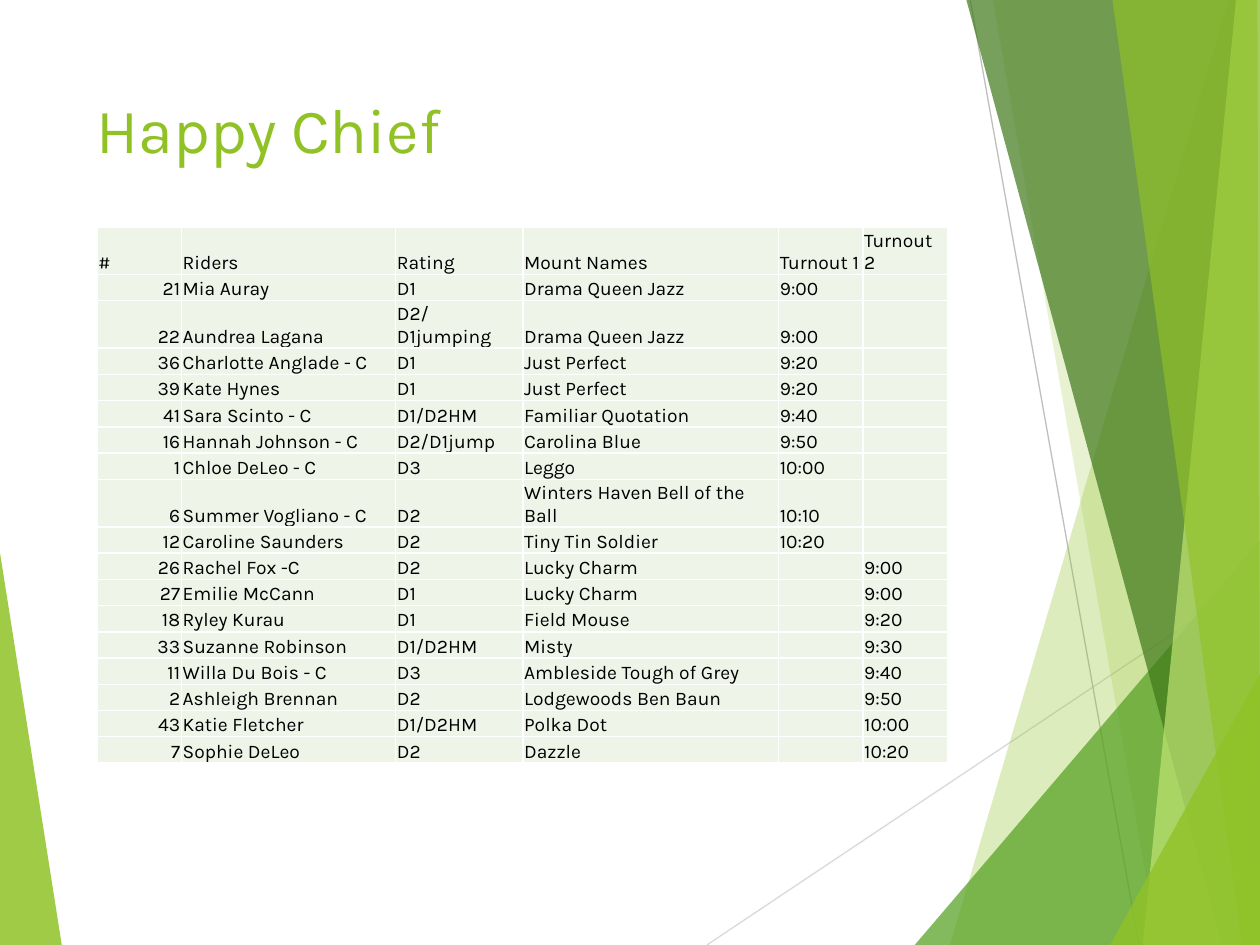
"""Build the Happy Chief turnout slide: green facet backdrop, title and rider table."""
from lxml.etree import SubElement
from pptx import Presentation
from pptx.dml.color import RGBColor as Rgb
from pptx.enum.shapes import MSO_CONNECTOR as Connector
from pptx.enum.text import MSO_ANCHOR as Anchor, PP_ALIGN as Align
from pptx.oxml.ns import qn
from pptx.util import Inches, Pt

TITLE = "Happy Chief"
HEADINGS = ("#", "Riders", "Rating", "Mount Names", "Turnout 1", "Turnout 2")
RIDERS = [
    ("21", "Mia Auray", "D1", "Drama Queen Jazz", "9:00", ""),
    ("22", "Aundrea Lagana", "D2/D1jumping", "Drama Queen Jazz", "9:00", ""),
    ("36", "Charlotte Anglade - C", "D1", "Just Perfect", "9:20", ""),
    ("39", "Kate Hynes", "D1", "Just Perfect", "9:20", ""),
    ("41", "Sara Scinto - C", "D1/D2HM", "Familiar Quotation", "9:40", ""),
    ("16", "Hannah Johnson - C", "D2/D1jump", "Carolina Blue", "9:50", ""),
    ("1", "Chloe DeLeo - C", "D3", "Leggo", "10:00", ""),
    ("6", "Summer Vogliano - C", "D2", "Winters Haven Bell of the Ball", "10:10", ""),
    ("12", "Caroline Saunders", "D2", "Tiny Tin Soldier", "10:20", ""),
    ("26", "Rachel Fox -C", "D2", "Lucky Charm", "", "9:00"),
    ("27", "Emilie McCann", "D1", "Lucky Charm", "", "9:00"),
    ("18", "Ryley Kurau", "D1", "Field Mouse", "", "9:20"),
    ("33", "Suzanne Robinson", "D1/D2HM", "Misty", "", "9:30"),
    ("11", "Willa Du Bois - C", "D3", "Ambleside Tough of Grey", "", "9:40"),
    ("2", "Ashleigh Brennan", "D2", "Lodgewoods Ben Baun", "", "9:50"),
    ("43", "Katie Fletcher", "D1/D2HM", "Polka Dot", "", "10:00"),
    ("7", "Sophie DeLeo", "D2", "Dazzle", "", "10:20"),
]

THEME = {
    "font": "Karla", "title_size": 36, "cell_size": 11,
    "lime": "90C226", "leaf": "54A021", "forest": "3F7819", "pale": "C0E474",
    "ink": "000000", "cell": "EEF4E8", "rule": "FFFFFF",
    "silver": "D9D9D9", "grey": "BFBFBF", "ray_width": 0.75, "rule_width": 1,
}

LEFT_FACET = ("lime", 85, [(0, 58.5), (4.9, 100), (0, 100)])
RAYS = [("silver", (56.1, 100), (100, 60.9)), ("grey", (77, 0), (90.4, 100))]
RIGHT_FACETS = [
    ("lime", 30, [(97.5, 0), (75.4, 100), (100, 100), (100, 0)]),
    ("lime", 20, [(78.8, 0), (91.9, 100), (100, 100), (100, 0)]),
    ("leaf", 72, [(72.6, 100), (100, 57.2), (100, 100)]),
    ("forest", 70, [(76.7, 0), (97, 100), (100, 100), (100, 0)]),
    ("pale", 70, [(98.1, 0), (90.7, 100), (100, 100), (100, 0)]),
    ("lime", 65, [(88.3, 0), (98.6, 100), (100, 100), (99.8, 0)]),
    ("lime", 80, [(88.1, 100), (100, 71.3), (100, 100)]),
]
TITLE_BOX = (6.7, 8.9, 69.4, 19.2)
TABLE_CORNER = (7.7, 24)
COLUMN_SHARES = (6.7, 17, 10.1, 20.3, 6.7, 6.7)
ROW_SHARE = 2.78
CELL_FORMAT = {
    "vertical_anchor": Anchor.BOTTOM, "margin_left": Inches(0.01),
    "margin_right": Inches(0.01), "margin_top": Inches(0.01), "margin_bottom": 0,
}
TITLE_FORMAT = {"word_wrap": True, "vertical_anchor": Anchor.TOP}

deck = Presentation()
deck.slide_width, deck.slide_height = Inches(10), Inches(7.5)
slide = deck.slides.add_slide(deck.slide_layouts[6])


def across(share):
    return round(deck.slide_width * share / 100)


def down(share):
    return round(deck.slide_height * share / 100)


def place(point):
    return across(point[0]), down(point[1])


def color(name):
    return Rgb.from_string(THEME[name])


def apply(target, settings):
    for key, value in settings.items():
        setattr(target, key, value)


def write(paragraph, words, size, ink):
    run = paragraph.add_run()
    run.text = words
    apply(run.font, {"name": THEME["font"], "size": Pt(THEME[size])})
    run.font.color.rgb = color(ink)


def add_facet(tint, opacity, corners):
    start, *others = map(place, corners)
    outline = slide.shapes.build_freeform(*start)
    outline.add_line_segments(others, close=True)
    facet = outline.convert_to_shape()
    facet.shadow.inherit = False
    facet.line.fill.background()
    facet.fill.solid()
    facet.fill.fore_color.rgb = color(tint)
    tint_node = facet.fill._xPr.find(".//" + qn("a:srgbClr"))
    SubElement(tint_node, qn("a:alpha"), val=str(opacity * 1000))


def add_ray(tint, start, end):
    ray = slide.shapes.add_connector(Connector.STRAIGHT, *place(start), *place(end))
    ray.line.color.rgb = color(tint)
    ray.line.width = Pt(THEME["ray_width"])
    SubElement(ray._element.spPr, qn("a:effectLst"))


def add_title():
    left, top, width, height = TITLE_BOX
    heading = slide.shapes.add_textbox(*place((left, top)), *place((width, height)))
    apply(heading.text_frame, TITLE_FORMAT)
    write(heading.text_frame.paragraphs[0], TITLE, "title_size", "lime")


def rule_cell(cell):
    properties = cell._tc.get_or_add_tcPr()
    for side in ("lnL", "lnR", "lnT", "lnB"):
        rule = SubElement(properties, qn("a:" + side), w=str(Pt(THEME["rule_width"])))
        paint = SubElement(rule, qn("a:solidFill"))
        SubElement(paint, qn("a:srgbClr"), val=THEME["rule"])


def fill_cell(cell, words, align):
    apply(cell, CELL_FORMAT)
    rule_cell(cell)
    cell.fill.solid()
    cell.fill.fore_color.rgb = color("cell")
    paragraph = cell.text_frame.paragraphs[0]
    paragraph.alignment = align
    if words:
        write(paragraph, words, "cell_size", "ink")
    else:
        SubElement(paragraph._p, qn("a:endParaRPr"), sz=str(THEME["cell_size"] * 100))


def add_schedule():
    rows = [HEADINGS, *RIDERS]
    size = place((sum(COLUMN_SHARES), ROW_SHARE * len(rows)))
    schedule = slide.shapes.add_table(
        len(rows), len(HEADINGS), *place(TABLE_CORNER), *size).table
    apply(schedule, {"first_row": False, "horz_banding": False})
    for column, share in zip(schedule.columns, COLUMN_SHARES):
        column.width = across(share)
    for r, entries in enumerate(rows):
        schedule.rows[r].height = down(ROW_SHARE)
        for c, words in enumerate(entries):
            align = Align.RIGHT if r and c == 0 else Align.LEFT
            fill_cell(schedule.cell(r, c), words, align)


add_facet(*LEFT_FACET)
for ray_parts in RAYS:
    add_ray(*ray_parts)
for facet_parts in RIGHT_FACETS:
    add_facet(*facet_parts)
add_title()
add_schedule()
deck.save("out.pptx")
